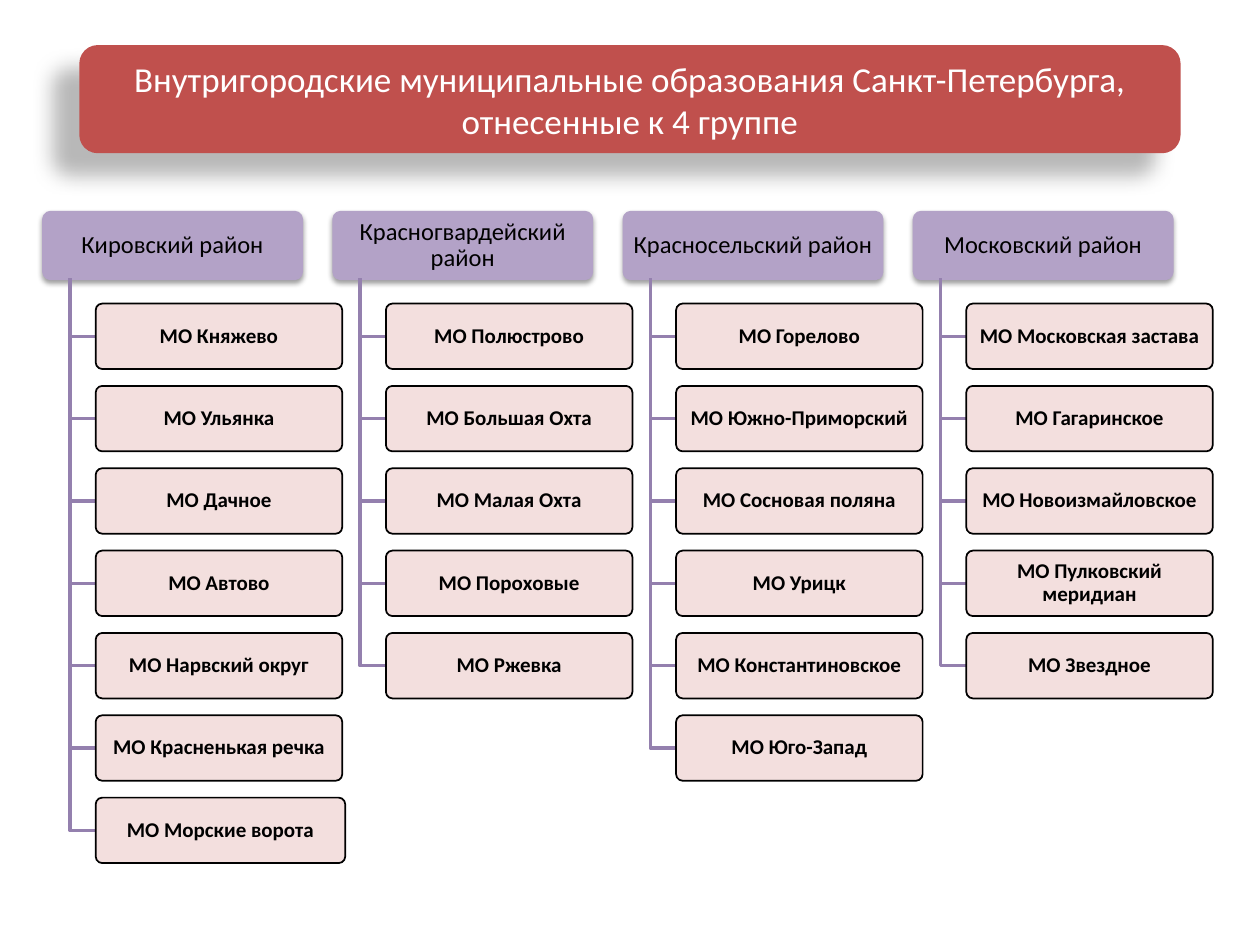
from dataclasses import dataclass

import pptx
import pptx.dml.color
import pptx.enum.shapes
import pptx.enum.text
import pptx.oxml
import pptx.oxml.ns
import pptx.util
from pptx.util import Cm


@dataclass(frozen=True)
class Theme:
    font: str = "Calibri"
    title_fill: str = "C0504D"
    title_text: str = "FFFFFF"
    district_fill: str = "B3A2C7"
    council_fill: str = "F2DCDB"
    council_line: str = "000000"
    branch: str = "9480AE"
    text: str = "000000"
    title_size: int = 20
    district_size: int = 14
    council_size: int = 12


TITLE = "Внутригородские муниципальные образования Санкт-Петербурга,\vотнесенные к 4 группе"
DISTRICTS = {
    "Кировский район": [
        "МО Княжево", "МО Ульянка", "МО Дачное", "МО Автово",
        "МО Нарвский округ", "МО Красненькая речка", "МО Морские ворота",
    ],
    "Красногвардейский район": [
        "МО Полюстрово", "МО Большая Охта", "МО Малая Охта",
        "МО Пороховые", "МО Ржевка",
    ],
    "Красносельский район": [
        "МО Горелово", "МО Южно-Приморский", "МО Сосновая поляна",
        "МО Урицк", "МО Константиновское", "МО Юго-Запад",
    ],
    "Московский район": [
        "МО Московская застава", "МО Гагаринское", "МО Новоизмайловское",
        "МО Пулковский меридиан", "МО Звездное",
    ],
}

# Grid, in centimetres
LEFT, COLUMN_STEP = 0.89, 5.85
DISTRICT_TOP, DISTRICT_W, BOX_H = 4.29, 5.18, 1.32
COUNCIL_TOP, COUNCIL_STEP, COUNCIL_W = 6.12, 1.66, 4.97
INDENT = 0.52


def rgb(value):
    return pptx.dml.color.RGBColor.from_string(value)


def write(s, text, *, font, size, color, bold=False, spacing=1.0, inset=0.04):
    tf = s.text_frame
    tf.word_wrap = True
    tf.vertical_anchor = pptx.enum.text.MSO_ANCHOR.MIDDLE
    tf.margin_left = tf.margin_right = Cm(inset)
    tf.margin_top = tf.margin_bottom = Cm(inset / 2)
    p = tf.paragraphs[0]
    p.text = text
    p.alignment = pptx.enum.text.PP_ALIGN.CENTER
    p.line_spacing = spacing
    for r in p.runs:
        r.font.name = font
        r.font.size = pptx.util.Pt(size)
        r.font.bold = bold
        r.font.color.rgb = rgb(color)


def cast_shadow(s, blur, distance, angle, opacity):
    """Add an outer shadow; blur and distance in points, opacity in percent."""
    effects = s._element.spPr.find(pptx.oxml.ns.qn("a:effectLst"))
    effects.append(pptx.oxml.parse_xml(
        f'<a:outerShdw {pptx.oxml.ns.nsdecls("a")} blurRad="{pptx.util.Pt(blur)}" '
        f'dist="{pptx.util.Pt(distance)}" dir="{angle * 60000}" rotWithShape="0">'
        f'<a:srgbClr val="000000"><a:alpha val="{opacity * 1000}"/></a:srgbClr>'
        '</a:outerShdw>'))


def set_opacity(s, percent):
    color = s._element.spPr.find(pptx.oxml.ns.qn("a:solidFill"))[0]
    color.append(pptx.oxml.parse_xml(
        f'<a:alpha {pptx.oxml.ns.nsdecls("a")} val="{percent * 1000}"/>'))


class DistrictSlide:
    def __init__(self, prs, theme):
        self.theme = theme
        self.slide = prs.slides.add_slide(prs.slide_layouts[6])

    def box(self, x, y, w, h, fill, line=None, line_width=1, radius=0.1):
        s = self.slide.shapes.add_shape(
            pptx.enum.shapes.MSO_SHAPE.ROUNDED_RECTANGLE,
            Cm(x), Cm(y), Cm(w), Cm(h))
        s.adjustments[0] = radius
        s.shadow.inherit = False
        s.fill.solid()
        s.fill.fore_color.rgb = rgb(fill)
        if line:
            s.line.color.rgb = rgb(line)
            s.line.width = pptx.util.Pt(line_width)
        else:
            s.line.fill.background()
        return s

    def title(self, text):
        t = self.theme
        s = self.box(1.6, 0.91, 22.2, 2.18, t.title_fill, radius=0.17)
        cast_shadow(s, blur=11.8, distance=19.7, angle=141, opacity=28)
        write(s, text, font=t.font, size=t.title_size, color=t.title_text, inset=0.25)

    def district(self, x, name):
        t = self.theme
        s = self.box(x, DISTRICT_TOP, DISTRICT_W, BOX_H,
                     t.district_fill, t.district_fill, 2.25)
        cast_shadow(s, blur=3.1, distance=1.6, angle=90, opacity=38)
        write(s, name, font=t.font, size=t.district_size, color=t.text, spacing=0.9)

    def branch(self, x, y):
        """Draw an elbow from the district box down to height y, then right."""
        start = DISTRICT_TOP + BOX_H
        builder = self.slide.shapes.build_freeform(Cm(x), Cm(start))
        builder.add_line_segments(
            [(Cm(x), Cm(y)), (Cm(x + INDENT), Cm(y))], close=False)
        s = builder.convert_to_shape()
        s.shadow.inherit = False
        s.fill.background()
        s.line.color.rgb = rgb(self.theme.branch)
        s.line.width = pptx.util.Pt(2)

    def council(self, x, y, name):
        t = self.theme
        s = self.box(x, y, COUNCIL_W, BOX_H, t.council_fill, t.council_line)
        set_opacity(s, 90)
        write(s, name, font=t.font, size=t.council_size, color=t.text,
              bold=True, spacing=0.9)
        return s

    def column(self, x, name, councils):
        self.district(x, name)
        for row, council in enumerate(councils):
            y = COUNCIL_TOP + row * COUNCIL_STEP
            self.branch(x + INDENT, y + BOX_H / 2)
            s = self.council(x + 2 * INDENT, y, council)
            if row == 6:
                s.width = Cm(5.03)


def main():
    prs = pptx.Presentation()
    prs.slide_width, prs.slide_height = Cm(25.4), Cm(19.05)
    slide = DistrictSlide(prs, Theme())
    slide.title(TITLE)
    for i, (name, councils) in enumerate(DISTRICTS.items()):
        slide.column(LEFT + i * COLUMN_STEP, name, councils)
    prs.save("out.pptx")


if __name__ == "__main__":
    main()
